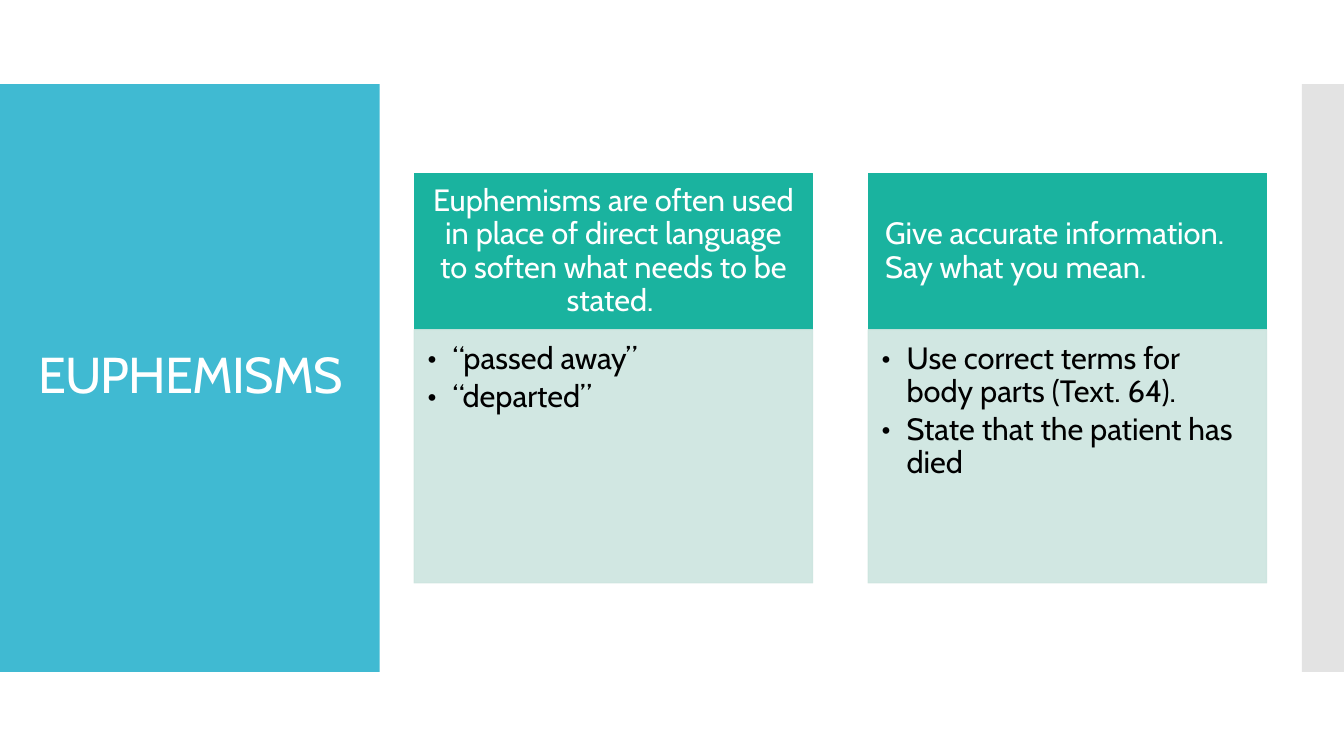
from dataclasses import dataclass

from lxml.etree import SubElement
from pptx import Presentation
from pptx.dml.color import RGBColor
from pptx.enum.shapes import MSO_SHAPE
from pptx.enum.text import MSO_ANCHOR, MSO_AUTO_SIZE, PP_ALIGN
from pptx.oxml.ns import qn
from pptx.util import Cm, Pt

FONT = "Cabin"
COLORS = {
    "title_band": "40BAD2",
    "side_band": "C8C8C8",
    "header": "1AB39F",
    "body": "CDE5DF",
    "light": "FFFFFF",
    "dark": "000000",
}

# Lengths in centimetres
SLIDE_W, SLIDE_H = 33.87, 19.05
BAND_TOP, BAND_H = 2.12, 14.81
TITLE_BAND_W, SIDE_BAND_W = 9.57, 1.06
CARD_LEFT, CARD_TOP, CARD_W, CARD_STEP = 10.44, 4.37, 10.04, 11.44
HEADER_H, BODY_H = 3.94, 6.38
BULLET_INDENT = 0.64


@dataclass
class Card:
    header: str
    align: PP_ALIGN
    bullets: list[str]


CARDS = [
    Card(
        "Euphemisms are often used in place of direct language to soften what needs to be stated. ",
        PP_ALIGN.CENTER,
        ["“passed away”", "“departed”"],
    ),
    Card(
        "Give accurate information. Say what you mean.",
        PP_ALIGN.LEFT,
        ["Use correct terms for body parts (Text. 64).", "State that the patient has died"],
    ),
]


def rgb(name: str) -> RGBColor:
    return RGBColor.from_string(COLORS[name])


def add_rect(shapes, left: float, top: float, width: float, height: float,
             color: str, opacity: int = 100, outlined: bool = False):
    sp = shapes.add_shape(MSO_SHAPE.RECTANGLE, Cm(left), Cm(top), Cm(width), Cm(height))
    sp.shadow.inherit = False
    sp.fill.solid()
    sp.fill.fore_color.rgb = rgb(color)
    if outlined:
        sp.line.color.rgb = rgb(color)
        sp.line.width = Pt(0.85)
    else:
        sp.line.fill.background()
    if opacity < 100:
        for clr in sp._element.spPr.iter(qn("a:srgbClr")):
            SubElement(clr, qn("a:alpha"), val=str(opacity * 1000))
    return sp


def set_frame(tf, anchor: MSO_ANCHOR, margins: tuple[float, float, float, float]) -> None:
    tf.word_wrap = True
    tf.auto_size = MSO_AUTO_SIZE.NONE
    tf.vertical_anchor = anchor
    tf.margin_left, tf.margin_top, tf.margin_right, tf.margin_bottom = map(Cm, margins)


def write(p, text: str, size: float, color: str, align: PP_ALIGN, after: float = 0):
    p.alignment = align
    p.line_spacing = 0.9
    p.space_before = Pt(0)
    p.space_after = Pt(after)
    r = p.add_run()
    r.text = text
    r.font.name = FONT
    r.font.size = Pt(size)
    r.font.color.rgb = rgb(color)
    return r


def add_bullet(p) -> None:
    pPr = p._p.get_or_add_pPr()
    pPr.set("marL", str(Cm(BULLET_INDENT)))
    pPr.set("indent", str(-Cm(BULLET_INDENT)))
    SubElement(pPr, qn("a:buFont"), typeface=FONT)
    SubElement(pPr, qn("a:buChar"), char="•")


def add_card(shapes, card: Card, left: float) -> None:
    header = add_rect(shapes, left, CARD_TOP, CARD_W, HEADER_H, "header", outlined=True)
    set_frame(header.text_frame, MSO_ANCHOR.MIDDLE, (0.43, 0.25, 0.43, 0.25))
    write(header.text_frame.paragraphs[0], card.header, 22, "light", card.align)

    body = add_rect(shapes, left, CARD_TOP + HEADER_H, CARD_W, BODY_H, "body", 90, outlined=True)
    tf = body.text_frame
    set_frame(tf, MSO_ANCHOR.TOP, (0.33, 0.33, 0.43, 0.48))
    for i, text in enumerate(card.bullets):
        p = tf.add_paragraph() if i else tf.paragraphs[0]
        write(p, text, 22, "dark", PP_ALIGN.LEFT, after=3.3)
        add_bullet(p)


def main() -> None:
    prs = Presentation()
    prs.slide_width, prs.slide_height = Cm(SLIDE_W), Cm(SLIDE_H)
    s = prs.slides.add_slide(prs.slide_layouts[5])

    # Bands at the left and right edges
    add_rect(s.shapes, 0, BAND_TOP, TITLE_BAND_W, BAND_H, "title_band")
    add_rect(s.shapes, SLIDE_W - SIDE_BAND_W, BAND_TOP, SIDE_BAND_W, BAND_H, "side_band", 50)

    # Title, brought in front of its band
    title = s.shapes.title
    title.left, title.top, title.width, title.height = Cm(0.71), Cm(3.12), Cm(8.18), Cm(12.78)
    set_frame(title.text_frame, MSO_ANCHOR.MIDDLE, (0.25, 0.13, 0.25, 0.13))
    r = write(title.text_frame.paragraphs[0], "EUPHEMISMS", 36, "light", PP_ALIGN.CENTER)
    r.font._element.set("spc", "-60")
    s.shapes._spTree.append(title._element)

    # Cards with a header and a bulleted body
    for i, card in enumerate(CARDS):
        add_card(s.shapes, card, CARD_LEFT + i * CARD_STEP)

    prs.save("out.pptx")


if __name__ == "__main__":
    main()
